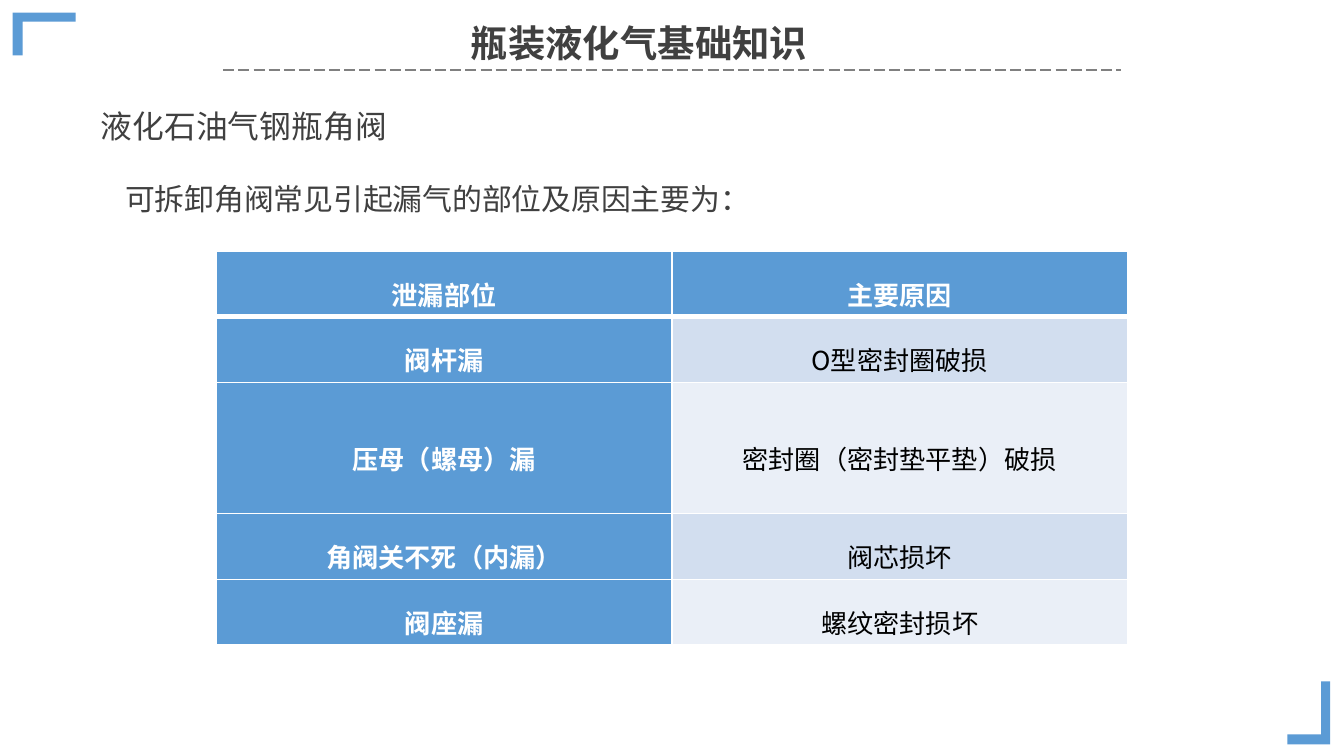
from lxml import etree
from pptx import Presentation
from pptx.dml.color import RGBColor
from pptx.enum import dml, shapes, text
from pptx.oxml import ns
from pptx.util import Cm, Pt

FONT = "Noto Sans CJK SC"
COLORS = {"accent": "5B9BD5", "ink": "404040", "rule": "808080", "white": "FFFFFF",
          "black": "000000", "band_dark": "D2DEEF", "band_light": "EAEFF7"}
HEADINGS = [
    ("瓶装液化气基础知识", (6.2, 0.25, 11.76, 1.12), 20, True, text.PP_ALIGN.CENTER),
    ("液化石油气钢瓶角阀", (1.65, 1.9, 6.12, 0.99), 17, False, text.PP_ALIGN.LEFT),
    ("可拆卸角阀常见引起漏气的部位及原因主要为：", (2.11, 3.28, 18.85, 0.94), 16, False,
     text.PP_ALIGN.LEFT),
]
LEAKS = [
    ("泄漏部位", "主要原因"),
    ("阀杆漏", "O型密封圈破损"),
    ("压母（螺母）漏", "密封圈（密封垫平垫）破损"),
    ("角阀关不死（内漏）", "阀芯损坏"),
    ("阀座漏", "螺纹密封损坏"),
]
ROW_UNITS = [1, 1, 2, 1, 1]
ROW_HEIGHT, COLUMN_WIDTH = 1.24, 8.61
TABLE_LEFT, TABLE_TOP = 4.09, 4.75
CORNERS = [((0.43, 0.05), 90, False), ((24.33, 12.88), 0, True)]


def color(name):
    return RGBColor.from_string(COLORS[name])


def format_paragraph(para, size, ink, bold, align):
    para.alignment = align
    para.space_before = Pt(0)
    for span in para.runs:
        span.font.name, span.font.size, span.font.bold = FONT, Pt(size), bold
        span.font.color.rgb = color(ink)
        etree.SubElement(span.font._element, ns.qn("a:ea"), typeface=FONT)


def fill_heading(box, words, place, size, bold, align):
    box.left, box.top, box.width, box.height = map(Cm, place)
    frame = box.text_frame
    frame.text = words
    frame.word_wrap = True
    frame.auto_size = text.MSO_AUTO_SIZE.NONE
    frame.vertical_anchor = text.MSO_ANCHOR.TOP
    para = frame.paragraphs[0]
    format_paragraph(para, size, "ink", bold, align)
    properties = para._p.get_or_add_pPr()
    properties.set("marL", "0")
    properties.set("indent", "0")
    etree.SubElement(properties, ns.qn("a:buNone"))


def add_corner(page, place, rotation, mirrored):
    box = page.shapes.add_shape(shapes.MSO_SHAPE.CORNER, *map(Cm, place), Cm(0.81), Cm(1.19))
    box.adjustments[0], box.adjustments[1] = 0.23, 0.21
    box.rotation = rotation
    box.shadow.inherit = False
    box.fill.solid()
    box.fill.fore_color.rgb = color("accent")
    box.line.fill.background()
    if mirrored:
        box._element.spPr.find(ns.qn("a:xfrm")).set("flipH", "1")


def add_rule(page):
    rule = page.shapes.add_connector(shapes.MSO_CONNECTOR.STRAIGHT,
                                     Cm(4.22), Cm(1.32), Cm(21.18), Cm(1.32))
    rule.line.color.rgb = color("rule")
    rule.line.width = Pt(0.75)
    rule.line.dash_style = dml.MSO_LINE.LONG_DASH
    etree.SubElement(rule._element.spPr, ns.qn("a:effectLst"))


def set_borders(cell, widths):
    properties = cell._tc.get_or_add_tcPr()
    for index, (side, width) in enumerate(widths.items()):
        line = etree.Element(ns.qn(f"a:ln{side}"), w=str(Pt(width)))
        fill = etree.SubElement(line, ns.qn("a:solidFill"))
        etree.SubElement(fill, ns.qn("a:srgbClr"), val=COLORS["white"])
        properties.insert(index, line)


def fill_cell(cell, words, row, column):
    strong = row == 0 or column == 0
    cell.text_frame.text = words
    cell.vertical_anchor = text.MSO_ANCHOR.MIDDLE
    cell.margin_left = cell.margin_right = Cm(0.18)
    cell.margin_top = cell.margin_bottom = Cm(0)
    para = cell.text_frame.paragraphs[0]
    para.line_spacing = 1.5
    format_paragraph(para, 14, "white" if strong else "black", strong, text.PP_ALIGN.CENTER)
    cell.fill.solid()
    band = "band_dark" if row % 2 else "band_light"
    cell.fill.fore_color.rgb = color("accent" if strong else band)
    set_borders(cell, {"L": 1, "R": 1, "T": 3 if row == 1 else 1, "B": 3 if row == 0 else 1})


def add_leak_table(page):
    table = page.shapes.add_table(len(LEAKS), 2, Cm(TABLE_LEFT), Cm(TABLE_TOP),
                                  Cm(2 * COLUMN_WIDTH), Cm(sum(ROW_UNITS) * ROW_HEIGHT)).table
    for column in table.columns:
        column.width = Cm(COLUMN_WIDTH)
    for row, (units, entries) in enumerate(zip(ROW_UNITS, LEAKS)):
        table.rows[row].height = Cm(units * ROW_HEIGHT)
        for column, words in enumerate(entries):
            fill_cell(table.cell(row, column), words, row, column)


def main():
    """Build the slide on common leak points of cylinder valves."""
    deck = Presentation()
    deck.slide_width, deck.slide_height = Cm(25.4), Cm(14.29)
    page = deck.slides.add_slide(deck.slide_layouts.get_by_name("Two Content"))
    for box, heading in zip(page.placeholders, HEADINGS):
        fill_heading(box, *heading)
    add_rule(page)
    for corner in CORNERS:
        add_corner(page, *corner)
    add_leak_table(page)
    deck.save("out.pptx")


if __name__ == "__main__":
    main()
